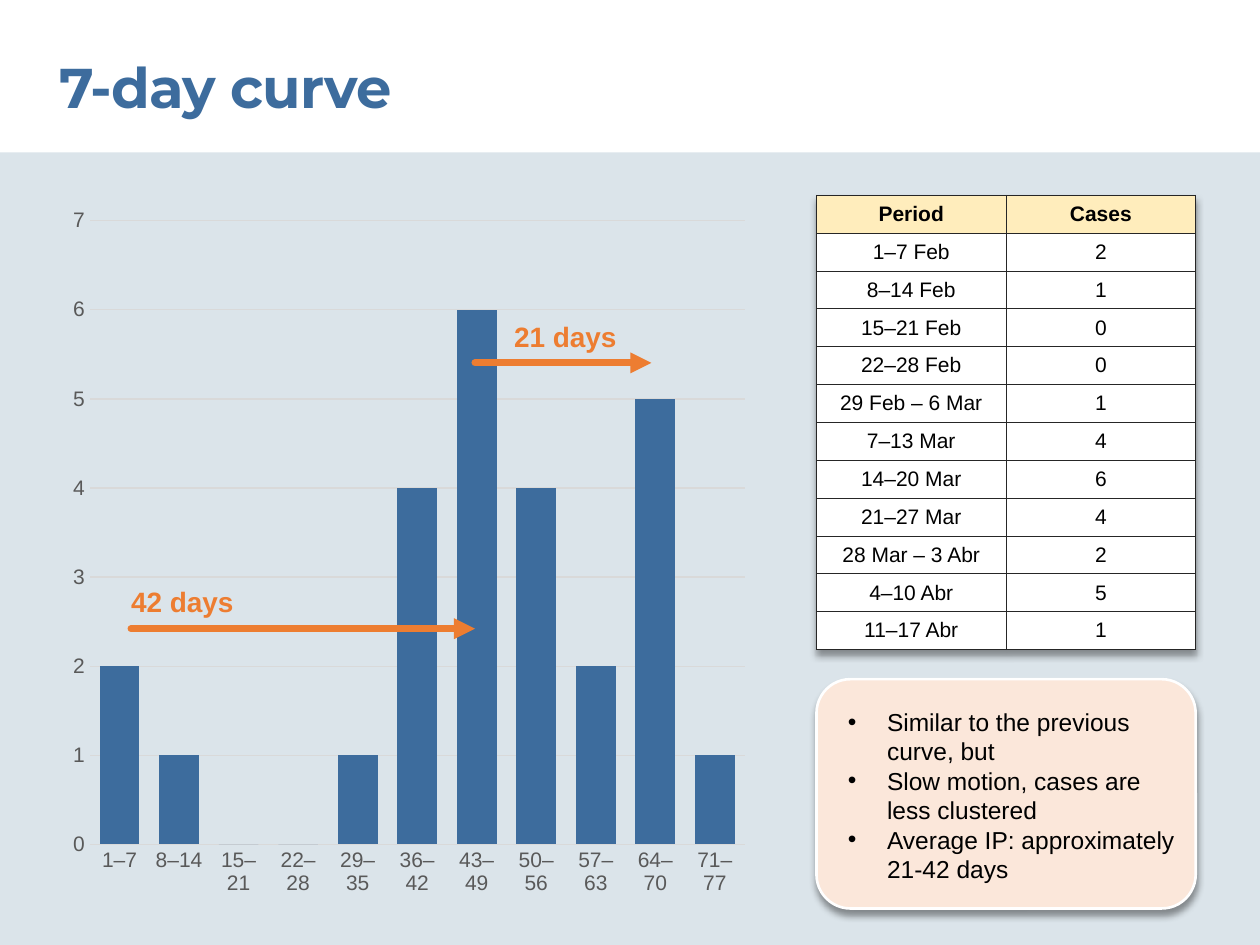
from lxml import etree
from pptx import Presentation
from pptx import util as u
from pptx.chart.data import CategoryChartData
from pptx.dml.color import RGBColor
from pptx.enum import chart as ch, shapes, text
from pptx.oxml import parse_xml
from pptx.oxml.ns import nsdecls, qn

NS = nsdecls("a")
BLUE, ORANGE, BLACK, WHITE, GRID = "3D6C9D", "ED7D31", "000000", "FFFFFF", "D9D9D9"
DAYS = ["1–7", "8–14", "15–21", "22–28", "29–35", "36–42",
        "43–49", "50–56", "57–63", "64–70", "71–77"]
WEEKS = ["1–7 Feb", "8–14 Feb", "15–21 Feb", "22–28 Feb", "29 Feb – 6 Mar", "7–13 Mar",
         "14–20 Mar", "21–27 Mar", "28 Mar – 3 Abr", "4–10 Abr", "11–17 Abr"]
CASES = [2, 1, 0, 0, 1, 4, 6, 4, 2, 5, 1]
NOTES = ["Similar to the previous curve, but",
         "Slow motion, cases are less clustered",
         "Average IP: approximately 21-42 days"]
SHADOW = (f'<a:effectLst {NS}><a:outerShdw blurRad="{u.Pt(4)}" dist="{u.Pt(3)}" dir="5400000" '
          'algn="t" rotWithShape="0"><a:srgbClr val="000000"><a:alpha val="40000"/>'
          '</a:srgbClr></a:outerShdw></a:effectLst>')


def rgb(code):
    return RGBColor.from_string(code)


def style(font, size, color, bold=False, name="Arial"):
    font.name, font.size, font.bold = name, u.Pt(size), bold
    font.color.rgb = rgb(color)


def paint(item, color):
    item.fill.solid()
    item.fill.fore_color.rgb = rgb(color)


def block(slide, kind, box, color):
    shape = slide.shapes.add_shape(kind, *map(u.Inches, box))
    shape.shadow.inherit = False
    paint(shape, color)
    shape.line.fill.background()
    return shape


def label(slide, box, lines, size, color, bold=False, name="Arial"):
    """Add a text box without margins, one paragraph a line."""
    frame = slide.shapes.add_textbox(*map(u.Inches, box)).text_frame
    frame.word_wrap = True
    frame.margin_left = frame.margin_right = frame.margin_top = frame.margin_bottom = 0
    for i, line in enumerate(lines):
        para = frame.add_paragraph() if i else frame.paragraphs[0]
        run = para.add_run()
        run.text = line
        style(run.font, size, color, bold, name)
    return frame


def add_title(slide, box):
    frame = label(slide, box, ["7-day curve"], 32, BLUE, True, "Montserrat")
    frame.paragraphs[0].runs[0].font._element.set("spc", "-50")


def add_notes(slide, box):
    x, y, w, h = box
    card = block(slide, shapes.MSO_SHAPE.ROUNDED_RECTANGLE, box, "FBE7DA")
    card.adjustments[0] = 0.148
    card.line.color.rgb = rgb(WHITE)
    card.line.width = u.Pt(1.5)
    props = card._element.spPr
    props.replace(props.find(qn("a:effectLst")), parse_xml(SHADOW))
    frame = label(slide, (x + 0.25, y + 0.22, w - 0.32, h - 0.41), NOTES, 14, BLACK)
    for para in frame.paragraphs:
        ppr = para._p.get_or_add_pPr()
        ppr.set("marL", str(u.Inches(0.31)))
        ppr.set("indent", str(u.Inches(-0.31)))
        color = etree.SubElement(ppr, qn("a:buClr"))
        etree.SubElement(color, qn("a:srgbClr"), val=BLACK)
        etree.SubElement(ppr, qn("a:buFont"), typeface="Arial")
        etree.SubElement(ppr, qn("a:buChar"), char="•")


def fill_cell(cell, value, head):
    cell.vertical_anchor = text.MSO_ANCHOR.MIDDLE
    cell.margin_left = cell.margin_right = u.Inches(0.08)
    cell.margin_top = cell.margin_bottom = u.Inches(0.05)
    para = cell.text_frame.paragraphs[0]
    para.alignment = text.PP_ALIGN.CENTER
    run = para.add_run()
    run.text = str(value)
    style(run.font, 12, BLACK, head)
    props = cell._tc.get_or_add_tcPr()
    for side in "LRTB":
        props.append(parse_xml(
            f'<a:ln{side} {NS} w="{u.Pt(0.5)}"><a:solidFill>'
            f'<a:srgbClr val="262626"/></a:solidFill></a:ln{side}>'))
    paint(cell, "FFEDBC" if head else WHITE)


def add_cases(slide, box):
    rows = [("Period", "Cases"), *zip(WEEKS, CASES)]
    table = slide.shapes.add_table(len(rows), 2, *map(u.Inches, box)).table
    table.first_row = table.horz_banding = False
    table._tbl.tblPr.insert(0, parse_xml(SHADOW))
    for r, row in enumerate(rows):
        for c, value in enumerate(row):
            fill_cell(table.cell(r, c), value, r == 0)


def add_curve(slide, box):
    data = CategoryChartData()
    data.categories = DAYS
    data.add_series("Series 1", CASES)
    chart = slide.shapes.add_chart(ch.XL_CHART_TYPE.COLUMN_CLUSTERED,
                                   *map(u.Inches, box), data).chart
    chart.has_legend = chart.has_title = False
    style(chart.font, 10, BLACK)
    plot = chart.plots[0]
    plot.gap_width = 50
    plot.vary_by_categories = False
    paint(plot.series[0].format, BLUE)
    days, count = chart.category_axis, chart.value_axis
    for axis in (days, count):
        axis.major_tick_mark = axis.minor_tick_mark = ch.XL_TICK_MARK.NONE
        style(axis.tick_labels.font, 12, "595959")
    count.minimum_scale, count.maximum_scale, count.major_unit = 0, 7, 1
    count.format.line.fill.background()
    for line in (days.format.line, count.major_gridlines.format.line):
        line.color.rgb = rgb(GRID)
        line.width = u.Pt(0.75)


def add_span(slide, x, y, w, words, shift, rise):
    """Draw an arrow from (x, y) with its words above it."""
    arrow = slide.shapes.add_connector(shapes.MSO_CONNECTOR.STRAIGHT,
                                       *map(u.Inches, (x, y, x + w, y)))
    arrow.line.color.rgb = rgb(ORANGE)
    arrow.line.width = u.Pt(4)
    line = arrow.line._get_or_add_ln()
    line.set("cap", "rnd")
    etree.SubElement(line, qn("a:round"))
    etree.SubElement(line, qn("a:tailEnd"), type="triangle")
    etree.SubElement(arrow._element.spPr, qn("a:effectLst"))
    label(slide, (x + shift, y - rise, 1.58, 0.27), [words], 16, ORANGE, True)


def main():
    deck = Presentation()
    deck.slide_width, deck.slide_height = u.Inches(10), u.Inches(7.5)
    slide = deck.slides.add_slide(deck.slide_layouts[6])
    block(slide, shapes.MSO_SHAPE.RECTANGLE, (0, 1.21, 10, 6.29), "DBE4EA")
    add_title(slide, (0.47, 0.42, 8.55, 0.54))
    add_notes(slide, (6.48, 5.39, 3.01, 1.82))
    add_cases(slide, (6.48, 1.55, 3.01, 3.6))
    add_curve(slide, (0.47, 1.55, 5.55, 5.66))
    add_span(slide, 1.04, 4.99, 2.73, "42 days", 0, 0.35)
    add_span(slide, 3.77, 2.88, 1.4, "21 days", 0.31, 0.34)
    deck.save("out.pptx")


if __name__ == "__main__":
    main()
